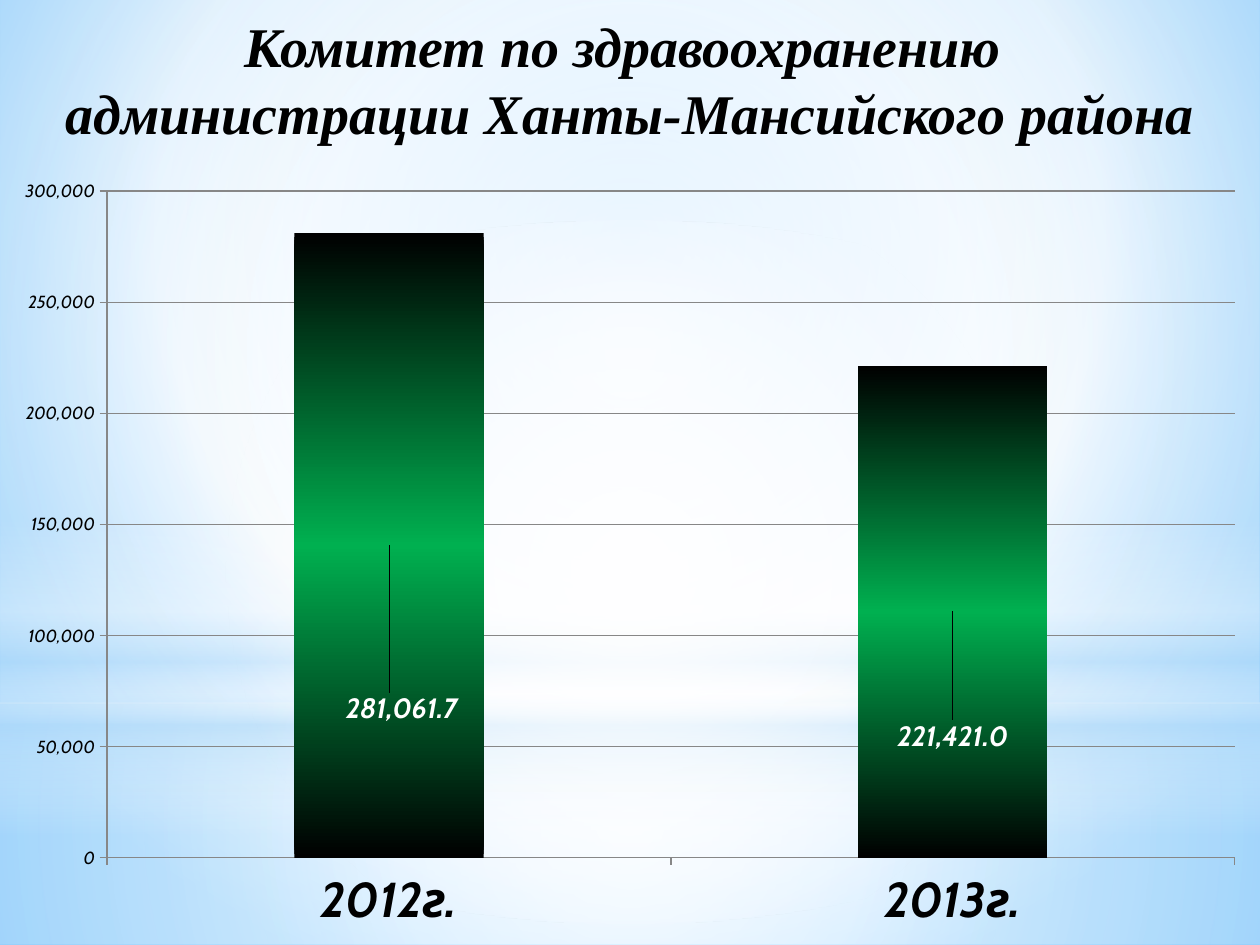
"""Build a slide with a title and a two-year column chart on a soft blue backdrop."""
from dataclasses import dataclass

import lxml.etree
import pptx
import pptx.chart.data
import pptx.dml.color
import pptx.enum.chart
import pptx.enum.shapes
import pptx.enum.text
import pptx.oxml
import pptx.oxml.ns
import pptx.util

qn = pptx.oxml.ns.qn
CENTRE = (50, 50, 50, 50)


@dataclass(frozen=True)
class Theme:
    """Colours, fonts and type sizes of the slide."""
    text: str = "000000"
    label: str = "FFFFFF"
    line: str = "878787"
    pale: str = "B4DCFA"
    bar: str = "00B050"
    title_font: str = "Times New Roman"
    chart_font: str = "Cabin"
    title_size: int = 32
    category_size: int = 28
    label_size: int = 16
    axis_size: int = 10


THEME = Theme()


def rgb(value):
    """Turn a hex string into a colour."""
    return pptx.dml.color.RGBColor.from_string(value)


def style(font, size, name, color=THEME.text, bold=False):
    """Format a font; all text on the slide is italic."""
    font.size, font.name = pptx.util.Pt(size), name
    font.bold, font.italic = bold, True
    font.color.rgb = rgb(color)


def paint(fill, root, stops, focus=None):
    """Give a fill (position, colour, opacity) stops, vertical or round a focus."""
    fill.solid()
    grad = lxml.etree.Element(qn("a:gradFill"), rotWithShape="1")
    gs_list = lxml.etree.SubElement(grad, qn("a:gsLst"))
    for pos, color, *opacity in stops:
        gs = lxml.etree.SubElement(gs_list, qn("a:gs"), pos=str(pos * 1000))
        clr = lxml.etree.SubElement(gs, qn("a:srgbClr"), val=color)
        for share in opacity:
            lxml.etree.SubElement(clr, qn("a:alpha"), val=str(share * 1000))
    if focus:
        around = lxml.etree.SubElement(grad, qn("a:path"), path="circle")
        sides = {k: str(v * 1000) for k, v in zip("ltrb", focus)}
        lxml.etree.SubElement(around, qn("a:fillToRect"), **sides)
    else:
        lxml.etree.SubElement(grad, qn("a:lin"), ang="5400000", scaled="0")
    grad = pptx.oxml.parse_xml(lxml.etree.tostring(grad))
    old = next(root.iter(qn("a:solidFill")))
    old.getparent().replace(old, grad)


def add_glow(prs, s, kind, top, height, stops, focus=CENTRE):
    """Add a full-width translucent shape, placed by shares of the slide height."""
    sp = s.shapes.add_shape(kind, 0, int(prs.slide_height * top),
                            prs.slide_width, int(prs.slide_height * height))
    sp.shadow.inherit = False
    sp.line.fill.background()
    paint(sp.fill, sp._element, stops, focus)


def add_backdrop(prs, s):
    """Paint the background and its layers of light."""
    kinds = pptx.enum.shapes.MSO_SHAPE
    white, pale = "FFFFFF", THEME.pale
    paint(s.background.fill, s._element,
          [(0, "9ED5FF"), (60, white), (100, "5BB9FF")], (20, 10, 20, 60))
    add_glow(prs, s, kinds.RECTANGLE, 0.744, 0.256,
             [(0, white, 91), (37, white, 76), (100, pale, 79)])
    add_glow(prs, s, kinds.RECTANGLE, 0, 0.744,
             [(0, white, 89), (48, white, 62), (100, pale, 79)])
    add_glow(prs, s, kinds.RECTANGLE, 0.55, 0.333,
             [(0, white, 0), (29, white, 30), (45, pale, 40),
              (55, white, 26), (65, pale, 60), (100, white, 0)], None)
    add_glow(prs, s, kinds.OVAL, 0.233, 0.744, [(0, white), (56, white, 0)])


def make_layout(**values):
    """Make a manual chart layout from shares of the chart's size."""
    layout = pptx.oxml.parse_xml(
        f'<c:layout {pptx.oxml.ns.nsdecls("c")}><c:manualLayout/></c:layout>')
    for tag, value in values.items():
        lxml.etree.SubElement(layout[0], qn(f"c:{tag}"), val=str(value))
    return layout


def format_axis(axis, size, bold=False):
    """Set an axis's line, ticks and labels."""
    axis.major_tick_mark = pptx.enum.chart.XL_TICK_MARK.OUTSIDE
    axis.minor_tick_mark = pptx.enum.chart.XL_TICK_MARK.NONE
    axis.format.line.color.rgb = rgb(THEME.line)
    style(axis.tick_labels.font, size, THEME.chart_font, bold=bold)


def add_label(series, index, dx, dy):
    """Label one column with its value, moved from the column's centre."""
    label = series.points[index].data_label
    style(label.font, THEME.label_size, THEME.chart_font, THEME.label, True)
    label.position = pptx.enum.chart.XL_LABEL_POSITION.CENTER
    idx = label._dLbl.find(qn("c:idx"))
    idx.addnext(lxml.etree.Element(qn("c:numFmt"), formatCode="#,##0.0", sourceLinked="0"))
    idx.addnext(make_layout(x=dx, y=dy))


def add_columns(prs, s):
    """Add the column chart below the title."""
    data = pptx.chart.data.CategoryChartData(number_format="#,##0.0")
    data.categories = ["2012г.", "2013г."]
    data.add_series("Series 1", [281061.7, 221421.0])
    top = int(prs.slide_height * 0.175)
    chart = s.shapes.add_chart(
        pptx.enum.chart.XL_CHART_TYPE.COLUMN_CLUSTERED, 0, top,
        prs.slide_width, prs.slide_height - top, data).chart
    chart.has_title = chart.has_legend = False
    style(chart.font, THEME.axis_size, THEME.chart_font)
    format_axis(chart.category_axis, THEME.category_size, True)
    axis = chart.value_axis
    format_axis(axis, THEME.axis_size)
    axis.minimum_scale, axis.maximum_scale, axis.major_unit = 0, 300000, 50000
    axis.tick_labels.number_format = "#,##0"
    axis.tick_labels.number_format_is_linked = False
    axis.major_gridlines.format.line.color.rgb = rgb(THEME.line)
    plot = chart.plots[0]
    plot.gap_width, plot.vary_by_categories = 198, False
    series = plot.series[0]
    paint(series.format.fill, series._element,
          [(0, "000000"), (50, THEME.bar), (100, "000000")])
    add_label(series, 0, 0.01, 0.21)
    add_label(series, 1, 0, 0.16)
    area = chart._chartSpace.chart.plotArea
    for old in area.findall(qn("c:layout")):
        area.remove(old)
    area.insert(0, make_layout(layoutTarget="inner", xMode="edge", yMode="edge",
                               x=0.085, y=0.033, w=0.895, h=0.855))


def set_title(prs, s, lines):
    """Place the title at the top, in front, one paragraph a line."""
    sp = s.shapes.title
    sp.left, sp.top = 0, int(prs.slide_height * 0.005)
    sp.width, sp.height = prs.slide_width, int(prs.slide_height * 0.157)
    tf = sp.text_frame
    tf.word_wrap = True
    tf.auto_size = pptx.enum.text.MSO_AUTO_SIZE.SHAPE_TO_FIT_TEXT
    tf.vertical_anchor = pptx.enum.text.MSO_ANCHOR.TOP
    for i, line in enumerate(lines):
        p = tf.add_paragraph() if i else tf.paragraphs[0]
        p.alignment = pptx.enum.text.PP_ALIGN.CENTER
        r = p.add_run()
        r.text = line
        style(r.font, THEME.title_size, THEME.title_font, bold=True)
    s.shapes._spTree.append(sp._element)


def main():
    """Build and save the slide."""
    prs = pptx.Presentation()
    prs.slide_width, prs.slide_height = pptx.util.Inches(10), pptx.util.Inches(7.5)
    s = prs.slides.add_slide(prs.slide_layouts[5])
    add_backdrop(prs, s)
    add_columns(prs, s)
    set_title(prs, s, ["Комитет по здравоохранению ",
                       "администрации Ханты-Мансийского района"])
    prs.save("out.pptx")


if __name__ == "__main__":
    main()
